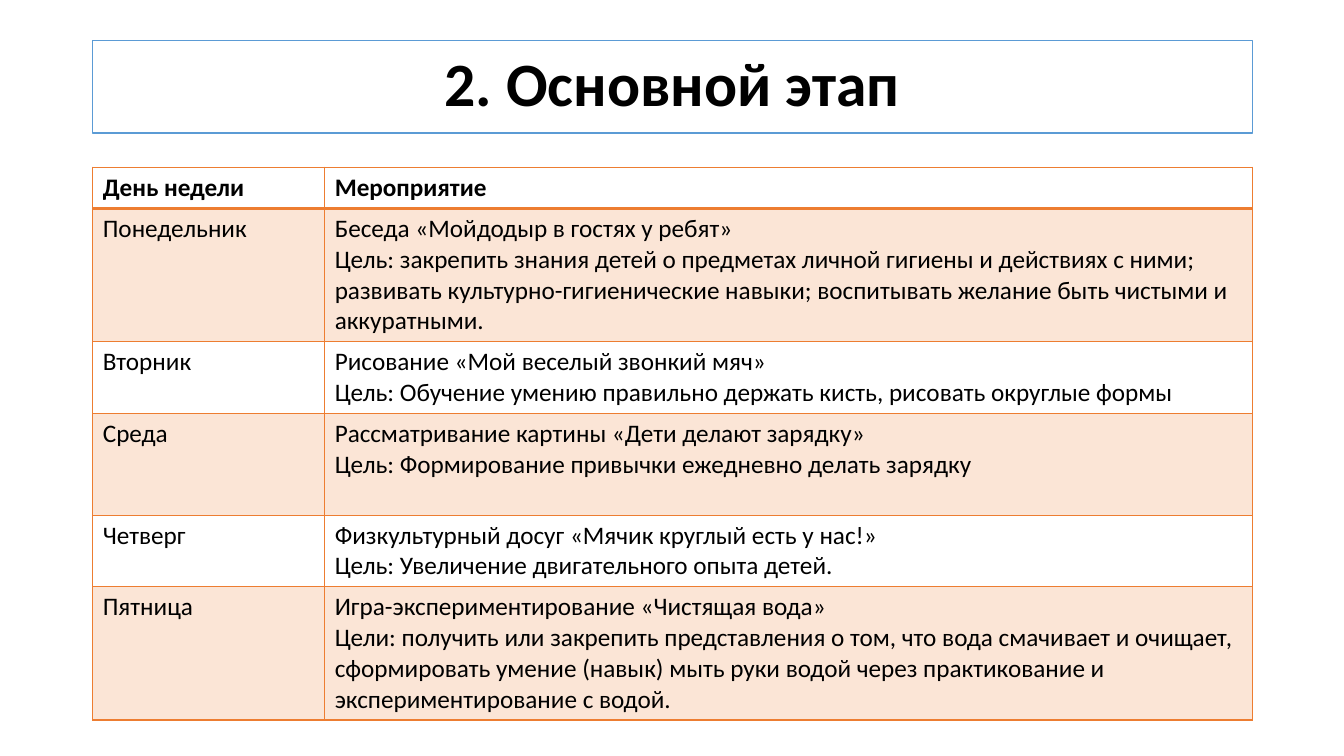
from lxml import etree
from pptx import Presentation
from pptx.dml.color import RGBColor
from pptx.enum.text import MSO_ANCHOR, PP_ALIGN
from pptx.oxml.ns import qn
from pptx.util import Inches, Pt

MIDDLE = MSO_ANCHOR.MIDDLE
CENTER = PP_ALIGN.CENTER
LEFT = PP_ALIGN.LEFT
FONT = "Calibri"
COLORS = {"text": "000000", "plain": "FFFFFF", "band": "FBE5D6",
          "frame": "5B9BD5", "grid": "ED7D31"}

WIDE, HIGH = 13.33, 7.5
EDGE, COL = 0.92, 2.3
SPANS = (1, 4)
LINE, PAD = 0.3, 0.11

PLAN = [
    (1, "День недели", ["Мероприятие"]),
    (4, "Понедельник", [
        "Беседа «Мойдодыр в гостях у ребят»",
        "Цель: закрепить знания детей о предметах личной гигиены и действиях с ними; "
        "развивать культурно-гигиенические навыки; воспитывать желание быть чистыми "
        "и аккуратными."]),
    (2, "Вторник", [
        "Рисование «Мой веселый звонкий мяч»",
        "Цель: Обучение умению правильно держать кисть, рисовать округлые формы"]),
    (3, "Среда", [
        "Рассматривание картины «Дети делают зарядку»",
        "Цель: Формирование привычки ежедневно делать зарядку"]),
    (2, "Четверг", [
        "Физкультурный досуг «Мячик круглый есть у нас!»",
        "Цель: Увеличение двигательного опыта детей."]),
    (4, "Пятница", [
        "Игра-экспериментирование «Чистящая вода»",
        "Цели: получить или закрепить представления о том, что вода смачивает и очищает,",
        "сформировать умение (навык) мыть руки водой через практикование и",
        "экспериментирование с водой."]),
]


def tint(name):
    """Return a named colour."""
    return RGBColor.from_string(COLORS[name])


def write(frame, lines, size, bold, align):
    """Write each line as a paragraph of one run."""
    for i, line in enumerate(lines):
        para = frame.paragraphs[0] if i == 0 else frame.add_paragraph()
        para.alignment = align
        run = para.add_run()
        run.text = line
        run.font.name = FONT
        run.font.size = Pt(size)
        run.font.bold = bold
        run.font.color.rgb = tint("text")


def border(cell, sides):
    """Draw the cell's edges, given widths in points by side."""
    props = cell._tc.get_or_add_tcPr()
    for i, (side, width) in enumerate(sides.items()):
        edge = etree.Element(qn("a:ln" + side), w=str(Pt(width)))
        fill = etree.SubElement(edge, qn("a:solidFill"))
        etree.SubElement(fill, qn("a:srgbClr"), val=COLORS["grid"])
        props.insert(i, edge)


def head(slide, text):
    """Place the framed title."""
    title = slide.shapes.title
    title.left, title.top = Inches(EDGE), Inches(0.4)
    title.width, title.height = Inches(COL * sum(SPANS)), Inches(0.92)
    title.fill.solid()
    title.fill.fore_color.rgb = tint("plain")
    title.line.color.rgb = tint("frame")
    title.line.width = Pt(1)
    frame = title.text_frame
    frame.vertical_anchor = MIDDLE
    write(frame, [text], 44, True, CENTER)
    frame.paragraphs[0].line_spacing = 0.9


def grid(slide, plan):
    """Build the banded week table."""
    tall = [LINE * count + PAD for count, _, _ in plan]
    table = slide.shapes.add_table(
        len(plan), len(SPANS), Inches(EDGE), Inches(1.66),
        Inches(COL * sum(SPANS)), Inches(sum(tall))).table
    table.first_row = table.horz_banding = False
    for col, span in zip(table.columns, SPANS):
        col.width = Inches(COL * span)
    for i, (_, day, tasks) in enumerate(plan):
        table.rows[i].height = Inches(tall[i])
        for cell, lines in zip(table.rows[i].cells, ([day], tasks)):
            write(cell.text_frame, lines, 18, i == 0, LEFT)
            cell.fill.solid()
            cell.fill.fore_color.rgb = tint("band" if i % 2 else "plain")
            border(cell, {"L": 1, "R": 1, "T": 2 if i == 1 else 1,
                          "B": 2 if i == 0 else 1})


def main():
    """Build and save the slide."""
    deck = Presentation()
    deck.slide_width, deck.slide_height = Inches(WIDE), Inches(HIGH)
    slide = deck.slides.add_slide(deck.slide_layouts.get_by_name("Title Only"))
    head(slide, "2. Основной этап")
    grid(slide, PLAN)
    deck.save("out.pptx")


if __name__ == "__main__":
    main()
